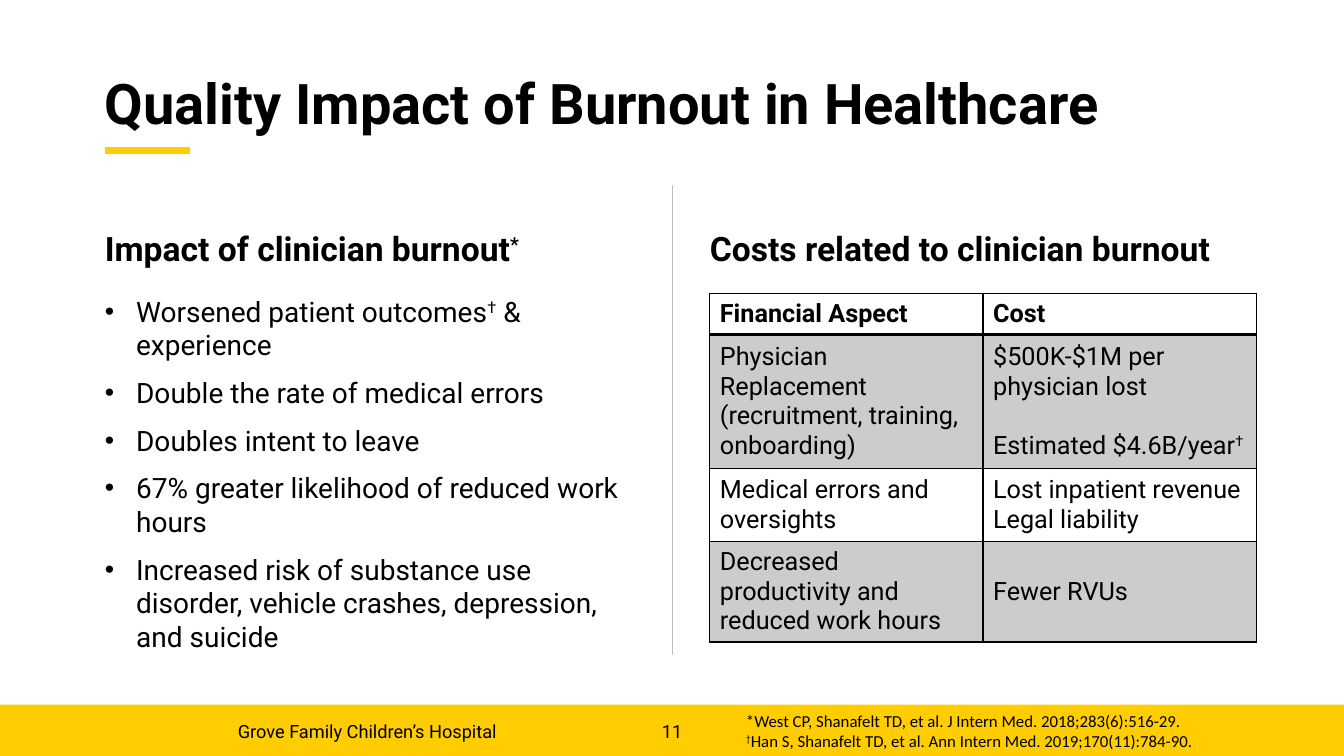
import pptx
import pptx.util
import pptx.dml.color
import pptx.enum.shapes
import pptx.enum.text
import pptx.oxml.ns
from lxml import etree

Inches, Pt = pptx.util.Inches, pptx.util.Pt
PP_ALIGN, ANCHOR = pptx.enum.text.PP_ALIGN, pptx.enum.text.MSO_ANCHOR

# Content: text between carets is raised
TITLE = "Quality Impact of Burnout in Healthcare"
IMPACT_HEADING = "Impact of clinician burnout^*^"
IMPACTS = [
    "Worsened patient outcomes^†^ & experience",
    "Double the rate of medical errors",
    "Doubles intent to leave",
    "67% greater likelihood of reduced work hours",
    "Increased risk of substance use disorder, vehicle crashes, depression, and suicide",
]
COST_HEADING = "Costs related to clinician burnout"
COSTS = [  # row height, then the paragraphs of each cell
    (0.41, ["Financial Aspect"], ["Cost"]),
    (1.33, ["Physician Replacement (recruitment, training, onboarding)"],
     ["$500K-$1M per physician lost", "Estimated $4.6B/year^†^"]),
    (0.72, ["Medical errors and oversights"], ["Lost inpatient revenue", "Legal liability"]),
    (1.0, ["Decreased productivity and reduced work hours"], ["Fewer RVUs"]),
]
HOSPITAL = "Grove Family Children’s Hospital"
PAGE = "11"
REFERENCES = [
    "*West CP, Shanafelt TD, et al. J Intern Med. 2018;283(6):516-29.",
    "^†^Han S, Shanafelt TD, et al. Ann Intern Med. 2019;170(11):784-90.",
]

BLACK, GOLD, RULE_GREY, BAND_GREY = "000000", "FFCD00", "BBBCBC", "CCCCCC"
LEFT, RIGHT, COLUMN_WIDTH = 1.04, 7.04, 5.25
COST_COLUMN = 2.71
INDENT = 0.31


def color(value):
    return pptx.dml.color.RGBColor.from_string(value)


def add_element(parent, tag, **attributes):
    element = etree.SubElement(parent, pptx.oxml.ns.qn(tag))
    for key, value in attributes.items():
        element.set(key, str(value))
    return element


def write(frame, lines, size, bold=False, face="Roboto", align=None,
          gap=0, bullet=False, line_spacing=None):
    for number, line in enumerate(lines):
        paragraph = frame.paragraphs[0] if number == 0 else frame.add_paragraph()
        if number and gap:
            paragraph.space_before = Pt(gap)
        if align is not None:
            paragraph.alignment = align
        if line_spacing:
            paragraph.line_spacing = line_spacing
        if bullet:
            properties = paragraph._p.get_or_add_pPr()
            properties.set("marL", str(Inches(INDENT)))
            properties.set("indent", str(-Inches(INDENT)))
            add_element(properties, "a:buSzPct", val=95000)
            add_element(properties, "a:buFont", typeface="Arial")
            add_element(properties, "a:buChar", char="•")
        font = paragraph.font
        font.name, font.size, font.bold = face, Pt(size), bold
        font.color.rgb = color(BLACK)
        for part, words in enumerate(line.split("^")):
            if words:
                run = paragraph.add_run()
                run.text = words
                if part % 2:
                    run._r.get_or_add_rPr().set("baseline", "30000")


def add_text(left, top, width, height, lines, size, anchor=ANCHOR.TOP,
             wrap=True, inset=(0, 0), **style):
    box = slide.shapes.add_textbox(Inches(left), Inches(top), Inches(width), Inches(height))
    frame = box.text_frame
    frame.word_wrap, frame.vertical_anchor = wrap, anchor
    frame.margin_left = frame.margin_right = Inches(inset[0])
    frame.margin_top = frame.margin_bottom = Inches(inset[1])
    write(frame, lines, size, **style)


def add_rule(x1, y1, x2, y2, line_color, weight):
    rule = slide.shapes.add_connector(pptx.enum.shapes.MSO_CONNECTOR.STRAIGHT,
                                      Inches(x1), Inches(y1), Inches(x2), Inches(y2))
    rule.line.color.rgb = color(line_color)
    rule.line.width = Pt(weight)
    add_element(rule._element.spPr, "a:effectLst")


def add_border(cell, side, weight):
    line = add_element(cell._tc.get_or_add_tcPr(), "a:ln" + side, w=Pt(weight))
    add_element(add_element(line, "a:solidFill"), "a:srgbClr", val=BLACK)


presentation = pptx.Presentation()
presentation.slide_width, presentation.slide_height = Inches(13.33), Inches(7.5)
slide = presentation.slides.add_slide(presentation.slide_layouts[6])

# Footer band and rules
footer = slide.shapes.add_shape(pptx.enum.shapes.MSO_SHAPE.RECTANGLE,
                                Inches(0), Inches(6.99), Inches(13.33), Inches(0.51))
footer.shadow.inherit = False
footer.fill.solid()
footer.fill.fore_color.rgb = color(GOLD)
footer.line.fill.background()
add_rule(LEFT, 1.49, 1.88, 1.49, GOLD, 5)
add_rule(6.67, 1.84, 6.67, 6.5, RULE_GREY, 0.5)

# Footer text
add_text(6.34, 7.15, 0.65, 0.26, [PAGE], 13, align=PP_ALIGN.CENTER)
add_text(2.36, 7.15, 2.86, 0.35, [HOSPITAL], 13, wrap=False)
add_text(7.3, 7, 4.85, 0.71, REFERENCES, 12, face="Calibri", inset=(0.1, 0.05))

# Title, headings and impacts
add_text(LEFT, 0.58, 11.25, 0.95, [TITLE], 40, ANCHOR.MIDDLE, bold=True, line_spacing=0.9)
for left, heading in ((LEFT, IMPACT_HEADING), (RIGHT, COST_HEADING)):
    add_text(left, 1.83, COLUMN_WIDTH, 0.83, [heading], 24, ANCHOR.BOTTOM, bold=True)
add_text(LEFT, 2.92, COLUMN_WIDTH, 3.59, IMPACTS, 20, gap=10, bullet=True)

# Cost table
costs = slide.shapes.add_table(
    len(COSTS), 2, Inches(RIGHT), Inches(2.91), Inches(2 * COST_COLUMN),
    Inches(sum(height for height, *_ in COSTS))).table
costs.horz_banding = False
for column in costs.columns:
    column.width = Inches(COST_COLUMN)
for row, (height, *cells) in enumerate(COSTS):
    costs.rows[row].height = Inches(height)
    for column, lines in enumerate(cells):
        cell = costs.cell(row, column)
        cell.vertical_anchor = ANCHOR.MIDDLE
        for side in "LRTB":
            under_header = (row, side) in ((0, "B"), (1, "T"))
            add_border(cell, side, 2 if under_header else 1)
        if row % 2:
            cell.fill.solid()
            cell.fill.fore_color.rgb = color(BAND_GREY)
        else:
            cell.fill.background()
        # The replacement cost stands one line apart from the estimate
        write(cell.text_frame, lines, 18, bold=row == 0, gap=21 if row == 1 else 0)

presentation.save("out.pptx")
